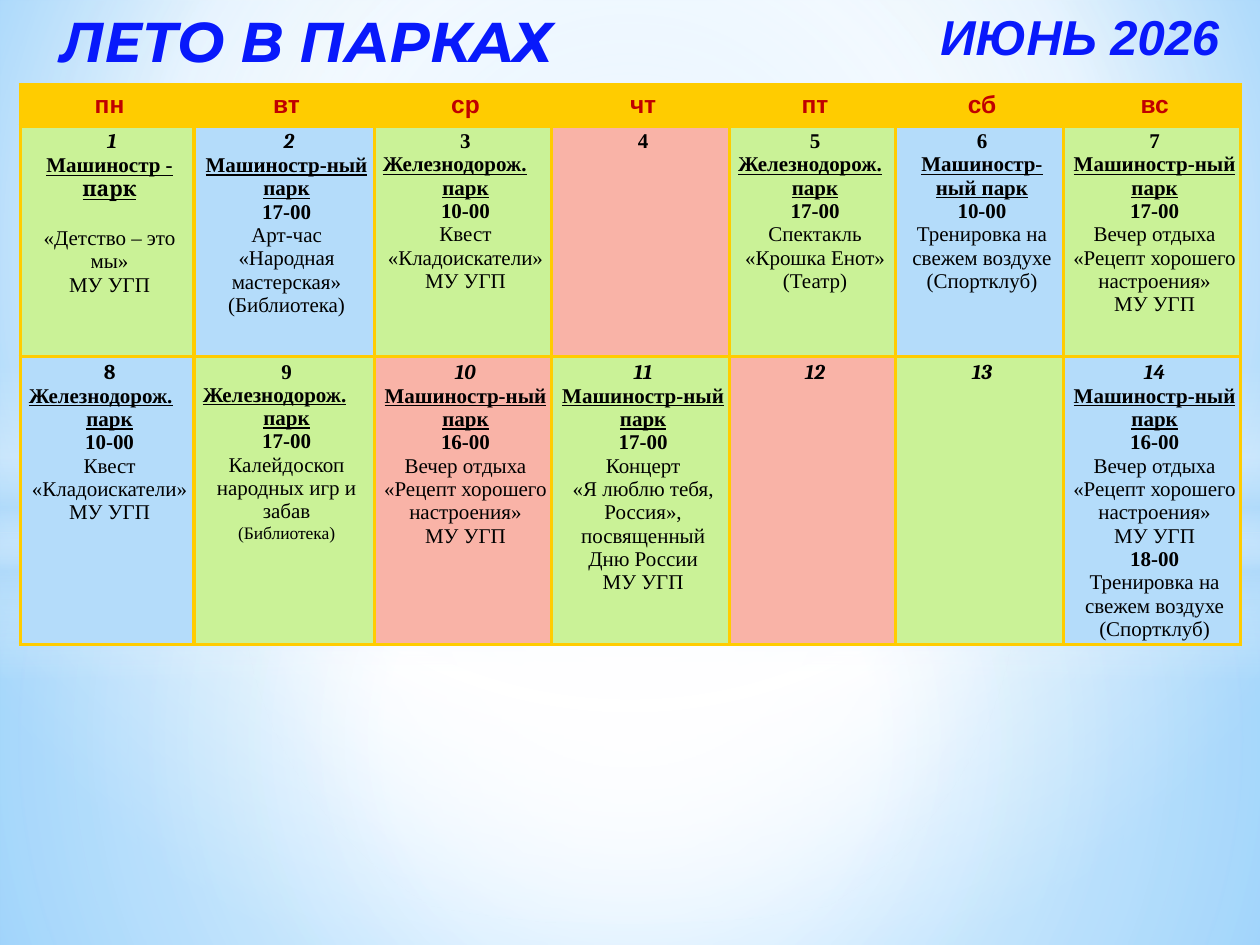
from lxml import etree
from pptx import Presentation
from pptx.dml.color import RGBColor
from pptx.enum import shapes, text
from pptx.oxml import parse_xml
from pptx.util import Inches, Pt

COLORS = {
    "heading": "0819FB", "weekday": "C00000", "text": "000000", "grid": "FFCC00",
    "green": "CAF297", "blue": "B4DCFA", "red": "F9B3A7",
    "white": "FFFFFF", "sky": "9ED5FF", "deep_sky": "5BB9FF",
}
A_URI = "http://schemas.openxmlformats.org/drawingml/2006/main"
SERIF = {"name": "Times New Roman", "size": Pt(12), "bold": False,
         "italic": False, "underline": False}
STYLES = {
    "plain": SERIF,
    "small": SERIF | {"size": Pt(10)},
    "strong": SERIF | {"bold": True},
    "park": SERIF | {"bold": True, "underline": True},
    "park_cambria": SERIF | {"name": "Cambria", "bold": True, "underline": True},
    "date_cambria": SERIF | {"name": "Cambria", "bold": True},
    "date_italic": SERIF | {"name": "Cambria", "bold": True, "italic": True},
    "weekday": {"name": "Arial", "size": Pt(14), "bold": True},
}
WEEKDAYS = ["пн", "вт", "ср", "чт", "пт", "сб", "вс"]
COLUMN_WIDTHS = [1.38, 1.43, 1.41, 1.41, 1.32, 1.33, 1.41]
ROW_HEIGHTS = [0.33, 1.83, 2.26]

MACHINE_PARK = ["park:Машиностр-ный парк"]
RAILWAY_PARK = ["park:Железнодорож.", "park:парк"]
QUEST = ["strong:10-00", "Квест «Кладоискатели»", "МУ УГП"]
EVENING = ["Вечер отдыха", "«Рецепт хорошего настроения»", "МУ УГП"]
TRAINING = ["Тренировка на свежем воздухе", "(Спортклуб)"]

# Fill, then lines; a line is "style:text", plain by default, with runs split by "|".
WEEKS = [
    [
        ("green", ["date_italic: 1", "park:Машиностр -|park_cambria: парк",
                   "«Детство – это мы»", "МУ УГП"]),
        ("blue", ["date_italic: 2", *MACHINE_PARK, "strong:17-00",
                  "Арт-час «Народная мастерская»", "(Библиотека)"]),
        ("green", ["strong:3", *RAILWAY_PARK, *QUEST]),
        ("red", ["strong:4"]),
        ("green", ["strong:5", *RAILWAY_PARK, "strong:17-00",
                   "Спектакль «Крошка Енот»", "(Театр)"]),
        ("blue", ["strong:6", *MACHINE_PARK, "strong:10-00", *TRAINING]),
        ("green", ["strong:7", *MACHINE_PARK, "strong:17-00", *EVENING]),
    ],
    [
        ("blue", ["date_cambria:8", *RAILWAY_PARK, *QUEST]),
        ("green", ["strong:9", *RAILWAY_PARK, "strong:17-00",
                   "Калейдоскоп народных игр и забав", "small:(Библиотека)"]),
        ("red", ["date_italic:10", *MACHINE_PARK, "strong:16-00", *EVENING]),
        ("green", ["date_italic:11", *MACHINE_PARK, "strong:17-00", "Концерт",
                   "«Я люблю тебя, Россия», посвященный Дню России", "МУ УГП"]),
        ("red", ["date_italic:12"]),
        ("green", ["date_italic:13"]),
        ("blue", ["date_italic:14", *MACHINE_PARK, "strong:16-00", *EVENING,
                  "strong:18-00", *TRAINING]),
    ],
]


def apply(target, values):
    for name, value in values.items():
        setattr(target, name, value)


def rgb(color):
    return RGBColor.from_string(COLORS[color])


def set_gradient(fill_parent, stops, focus=None):
    """Use (position, colour, opacity) stops: radial around focus, else top to bottom."""
    stop_xml = "".join(
        f'<a:gs pos="{pos * 1000}"><a:srgbClr val="{COLORS[color]}">'
        f'<a:alpha val="{opacity * 1000}"/></a:srgbClr></a:gs>'
        for pos, color, opacity in stops)
    if focus:
        sides = " ".join(f'{side}="{value * 1000}"' for side, value in zip("ltrb", focus))
        direction = f'<a:path path="circle"><a:fillToRect {sides}/></a:path>'
    else:
        direction = '<a:lin ang="5400000" scaled="0"/>'
    old = fill_parent.find(f"{{{A_URI}}}solidFill")
    fill_parent.replace(old, parse_xml(
        f'<a:gradFill xmlns:a="{A_URI}" rotWithShape="1"><a:gsLst>{stop_xml}</a:gsLst>'
        f"{direction}</a:gradFill>"))


def draw_sky(slide):
    backdrop = slide.background.fill
    backdrop.solid()
    backdrop.fore_color.rgb = rgb("white")
    set_gradient(slide.background._cSld.bg.bgPr,
                 [(0, "sky", 100), (60, "white", 100), (100, "deep_sky", 100)],
                 (20, 10, 20, 60))
    rect, oval = shapes.MSO_SHAPE.RECTANGLE, shapes.MSO_SHAPE.OVAL
    center = (50, 50, 50, 50)
    layers = [
        (rect, 4.23, 3.27, [(0, "white", 91), (37, "white", 76), (100, "blue", 79)], center),
        (rect, 0, 4.23, [(0, "white", 89), (48, "white", 62), (100, "blue", 79)], center),
        (rect, 2.9, 2.5, [(0, "white", 0), (29, "white", 30), (45, "blue", 40),
                          (55, "white", 26), (65, "blue", 60), (100, "white", 0)], None),
        (oval, 1.75, 5.58, [(0, "white", 100), (54, "white", 0)], center),
    ]
    for outline, top, height, stops, focus in layers:
        haze = slide.shapes.add_shape(outline, 0, Inches(top), Inches(10), Inches(height))
        haze.shadow.inherit = False
        haze.line.fill.background()
        haze.fill.solid()
        set_gradient(haze._element.spPr, stops, focus)


def format_cell(cell, fill):
    apply(cell, {"margin_left": Inches(0.07), "margin_right": Inches(0.03),
                 "margin_top": Inches(0.03), "margin_bottom": Inches(0.03)})
    properties = cell._tc.get_or_add_tcPr()
    for side in "LRTB":
        border = etree.SubElement(properties, f"{{{A_URI}}}ln{side}", w=str(Pt(2)))
        paint = etree.SubElement(border, f"{{{A_URI}}}solidFill")
        etree.SubElement(paint, f"{{{A_URI}}}srgbClr", val=COLORS["grid"])
    cell.fill.solid()
    cell.fill.fore_color.rgb = rgb(fill)


def write_lines(cell, lines, color):
    frame = cell.text_frame
    for index, line in enumerate(lines):
        paragraph = frame.add_paragraph() if index else frame.paragraphs[0]
        is_left = line == RAILWAY_PARK[0]
        paragraph.alignment = text.PP_ALIGN.LEFT if is_left else text.PP_ALIGN.CENTER
        if line.startswith("«Детство"):
            paragraph.space_before = Pt(14)
        for part in line.split("|"):
            style, _, words = part.rpartition(":")
            run = paragraph.add_run()
            run.text = words
            apply(run.font, STYLES[style or "plain"])
            run.font.color.rgb = rgb(color)


def draw_calendar(slide, left, top, width, height):
    calendar = slide.shapes.add_table(len(ROW_HEIGHTS), len(WEEKDAYS),
                                      left, top, width, height).table
    apply(calendar, {"first_row": False, "horz_banding": False})
    for column, size in zip(calendar.columns, COLUMN_WIDTHS):
        column.width = Inches(size)
    for row, size in zip(calendar.rows, ROW_HEIGHTS):
        row.height = Inches(size)
    for cell, weekday in zip(calendar.rows[0].cells, WEEKDAYS):
        format_cell(cell, "grid")
        cell.vertical_anchor = text.MSO_ANCHOR.MIDDLE
        write_lines(cell, [f"weekday:{weekday}"], "weekday")
    for row, week in zip(list(calendar.rows)[1:], WEEKS):
        for cell, (fill, lines) in zip(row.cells, week):
            format_cell(cell, fill)
            write_lines(cell, lines, "text")


def write_heading(heading, words, font, size, wrap):
    frame = heading.text_frame
    frame.text = words
    apply(frame, {"word_wrap": wrap, "vertical_anchor": text.MSO_ANCHOR.TOP,
                  "auto_size": text.MSO_AUTO_SIZE.SHAPE_TO_FIT_TEXT})
    frame.paragraphs[0].alignment = text.PP_ALIGN.CENTER
    run = frame.paragraphs[0].runs[0]
    apply(run.font, {"name": font, "size": Pt(size), "bold": True, "italic": True})
    run.font.color.rgb = rgb("heading")


def draw_headings(slide, left, top, width):
    month_width = Inches(2.44)
    month = slide.shapes.add_textbox(left + width - month_width, top,
                                     month_width, Inches(0.57))
    write_heading(month, "ИЮНЬ 2026", "Arial", 28, True)
    title = slide.shapes.title
    apply(title, {"left": left, "top": top, "width": Inches(4.3), "height": Inches(0.64)})
    write_heading(title, "ЛЕТО В ПАРКАХ", "Montserrat", 32, False)
    slide.shapes._spTree.append(title._element)  # bring in front of the sky


def main():
    deck = Presentation()
    apply(deck, {"slide_width": Inches(10), "slide_height": Inches(7.5)})
    slide = deck.slides.add_slide(deck.slide_layouts[5])
    draw_sky(slide)
    draw_calendar(slide, Inches(0.16), Inches(0.67), Inches(9.69), Inches(4.42))
    draw_headings(slide, Inches(0.28), 0, Inches(9.51))
    deck.save("out.pptx")


if __name__ == "__main__":
    main()
